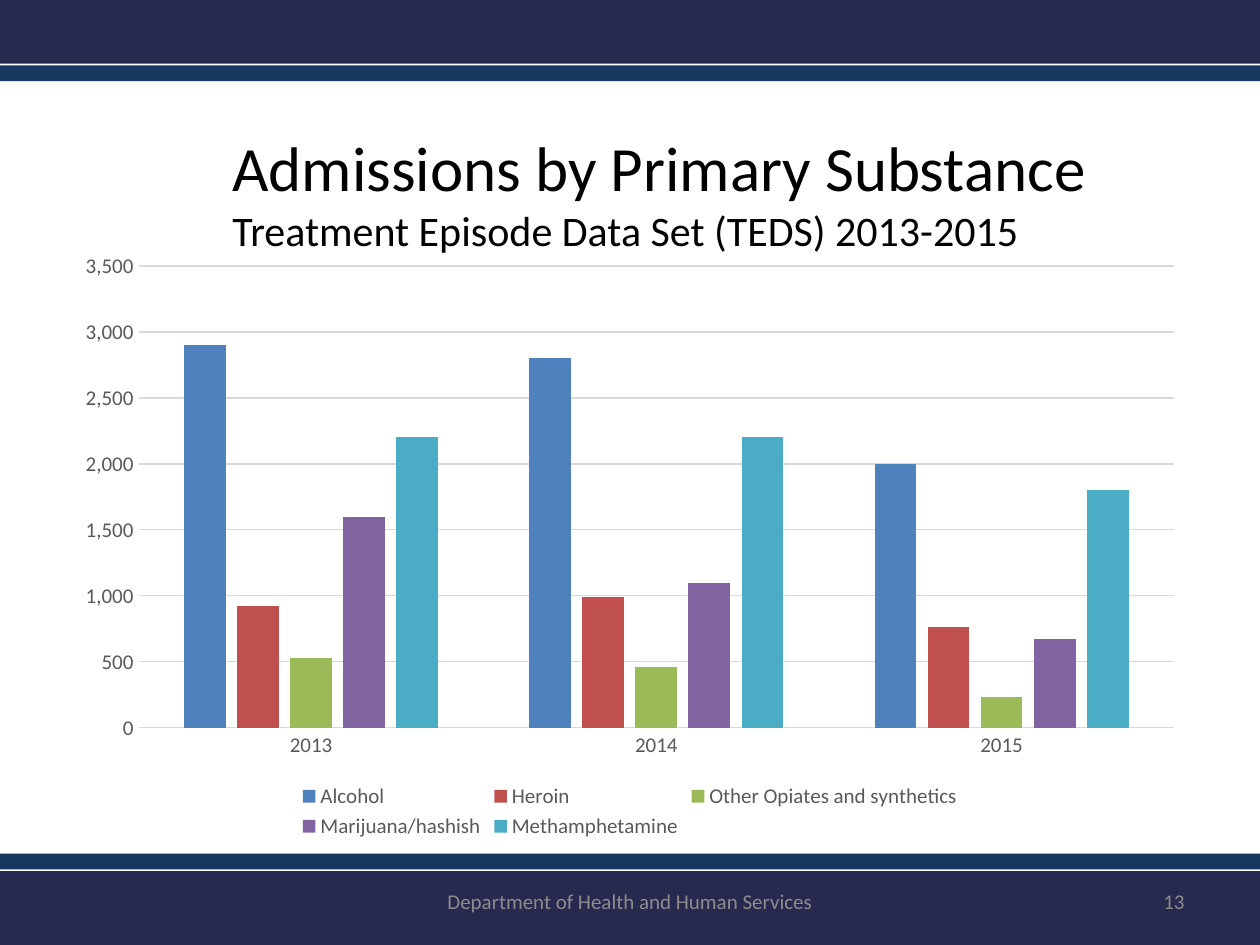
from collections import namedtuple

from pptx import Presentation
from pptx.chart.data import CategoryChartData
from pptx.dml.color import RGBColor
from pptx.enum.chart import XL_CHART_TYPE, XL_LEGEND_POSITION, XL_TICK_MARK
from pptx.enum.shapes import MSO_SHAPE
from pptx.enum.text import MSO_ANCHOR, MSO_AUTO_SIZE, PP_ALIGN
from pptx.util import Inches, Pt

Box = namedtuple("Box", "column row columns rows")

COLUMN = ROW = Inches(0.1)
SLIDE = Box(0, 0, 100, 75)
HEADER = Box(0, 0, 100, 6.45)
FOOTER = Box(0, 67.75, 100, 7.25)
TITLE = Box(17.45, 9.7, 70.4, 11.1)
CHART = Box(5, 19.17, 90, 47.8)
STRIP_ROWS = 1.25
STRIP_GAP = 0.15

FONT = "Calibri"
NAVY = RGBColor(0x28, 0x29, 0x4E)
BLUE = RGBColor(0x17, 0x37, 0x5E)
BLACK = RGBColor(0, 0, 0)
FOOTER_GRAY = RGBColor(0x8C, 0x8C, 0x8C)
LABEL_GRAY = RGBColor(0x59, 0x59, 0x59)
GRID_GRAY = RGBColor(0xD9, 0xD9, 0xD9)

LABEL_FORMAT = {"name": FONT, "size": Pt(12)}
YEARS = ["2013", "2014", "2015"]
ADMISSIONS = [
    ("Alcohol", (2900, 2800, 2000), RGBColor(0x4F, 0x81, 0xBD)),
    ("Heroin", (920, 990, 760), RGBColor(0xC0, 0x50, 0x4D)),
    ("Other Opiates and synthetics", (530, 460, 230), RGBColor(0x9B, 0xBB, 0x59)),
    ("Marijuana/hashish", (1600, 1100, 670), RGBColor(0x80, 0x64, 0xA2)),
    ("Methamphetamine", (2200, 2200, 1800), RGBColor(0x4B, 0xAC, 0xC6)),
]


def set_attributes(target, values):
    """Set every attribute named in a dict of format values."""
    for name, value in values.items():
        setattr(target, name, value)


def set_font(font, color, values):
    """Give a font its colour and format values."""
    set_attributes(font, values)
    font.color.rgb = color


def lengths(box):
    """Turn a grid box into left, top, width and height."""
    return (round(box.column * COLUMN), round(box.row * ROW),
            round(box.columns * COLUMN), round(box.rows * ROW))


def add_band(slide, box, color):
    """Fill a box with a plain rectangle."""
    shape = slide.shapes.add_shape(MSO_SHAPE.RECTANGLE, *lengths(box))
    shape.shadow.inherit = False
    shape.fill.solid()
    shape.fill.fore_color.rgb = color
    shape.line.fill.background()


def add_label(slide, box, text, alignment):
    """Place one line of footer text in a box."""
    frame = slide.shapes.add_textbox(*lengths(box)).text_frame
    set_attributes(frame, {"word_wrap": True, "vertical_anchor": MSO_ANCHOR.MIDDLE})
    paragraph = frame.paragraphs[0]
    set_attributes(paragraph, {"text": text, "alignment": alignment})
    set_font(paragraph.runs[0].font, FOOTER_GRAY, LABEL_FORMAT)


def add_header(slide, box):
    """Draw the navy band with a blue strip below it."""
    navy_rows = box.rows - STRIP_ROWS - STRIP_GAP
    add_band(slide, box._replace(rows=navy_rows), NAVY)
    strip_row = box.row + box.rows - STRIP_ROWS
    add_band(slide, box._replace(row=strip_row, rows=STRIP_ROWS), BLUE)


def add_footer(slide, box):
    """Draw the blue strip, the navy band and the footer text."""
    offset = STRIP_ROWS + STRIP_GAP
    add_band(slide, box._replace(row=box.row + offset, rows=box.rows - offset), NAVY)
    add_band(slide, box._replace(rows=STRIP_ROWS), BLUE)
    text_row = box.row + 1.75
    add_label(slide, Box(box.column + 34.17, text_row, 31.67, 4),
              "Department of Health and Human Services", PP_ALIGN.CENTER)
    add_label(slide, Box(box.column + 71.7, text_row, 23.3, 4), "13", PP_ALIGN.RIGHT)


def add_title(slide, box):
    """Place the title and its subtitle in the title placeholder."""
    title = slide.shapes.title
    set_attributes(title, dict(zip(("left", "top", "width", "height"), lengths(box))))
    frame = title.text_frame
    frame.text = "Admissions by Primary Substance\nTreatment Episode Data Set (TEDS) 2013-2015"
    set_attributes(frame, {"word_wrap": False, "vertical_anchor": MSO_ANCHOR.TOP,
                           "auto_size": MSO_AUTO_SIZE.SHAPE_TO_FIT_TEXT})
    for paragraph, size in zip(frame.paragraphs, (36, 24)):
        paragraph.alignment = PP_ALIGN.LEFT
        set_font(paragraph.runs[0].font, BLACK, {"name": FONT, "size": Pt(size)})


def format_line(line):
    """Give a chart line the thin grid style."""
    line.color.rgb = GRID_GRAY
    line.width = Pt(0.75)


def add_admissions_chart(slide, box):
    """Place the clustered column chart of admissions by year."""
    data = CategoryChartData(number_format="#,##0")
    data.categories = YEARS
    for name, values, _ in ADMISSIONS:
        data.add_series(name, values)
    chart = slide.shapes.add_chart(
        XL_CHART_TYPE.COLUMN_CLUSTERED, *lengths(box), data).chart
    set_attributes(chart, {"has_title": False, "has_legend": True})
    set_font(chart.font, BLACK, {"name": FONT, "size": Pt(10)})
    set_attributes(chart.legend, {"position": XL_LEGEND_POSITION.BOTTOM,
                                  "include_in_layout": False})
    set_font(chart.legend.font, LABEL_GRAY, LABEL_FORMAT)

    plot = chart.plots[0]
    set_attributes(plot, {"gap_width": 219, "overlap": -27, "vary_by_categories": False})
    for series, (_, _, color) in zip(plot.series, ADMISSIONS):
        series.format.fill.solid()
        series.format.fill.fore_color.rgb = color

    for axis in (chart.category_axis, chart.value_axis):
        set_attributes(axis, {"major_tick_mark": XL_TICK_MARK.NONE,
                              "minor_tick_mark": XL_TICK_MARK.NONE})
        set_font(axis.tick_labels.font, LABEL_GRAY, LABEL_FORMAT)
    format_line(chart.category_axis.format.line)
    set_attributes(chart.value_axis, {"minimum_scale": 0, "maximum_scale": 3500,
                                      "major_unit": 500})
    set_attributes(chart.value_axis.tick_labels, {"number_format": "#,##0",
                                                  "number_format_is_linked": False})
    chart.value_axis.format.line.fill.background()
    format_line(chart.value_axis.major_gridlines.format.line)


def main():
    """Build the admissions slide and save it."""
    presentation = Presentation()
    _, _, width, height = lengths(SLIDE)
    set_attributes(presentation, {"slide_width": width, "slide_height": height})
    slide = presentation.slides.add_slide(presentation.slide_layouts[5])
    add_header(slide, HEADER)
    add_footer(slide, FOOTER)
    add_admissions_chart(slide, CHART)
    add_title(slide, TITLE)
    presentation.save("out.pptx")


if __name__ == "__main__":
    main()
